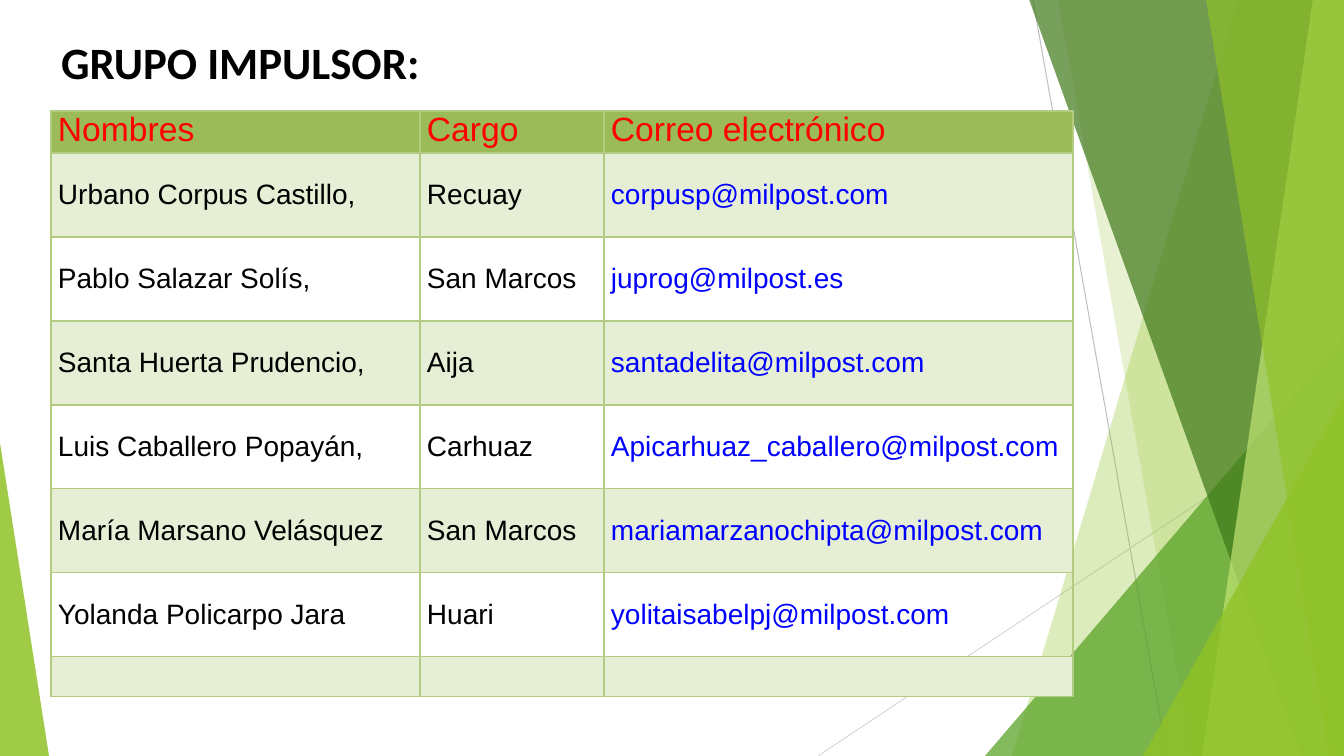
"""Build the slide that lists the members of the promoting group."""

import dataclasses

import lxml.etree
import pptx
import pptx.dml.color
import pptx.enum.shapes
import pptx.enum.text
import pptx.oxml.ns
import pptx.util

qn = pptx.oxml.ns.qn


@dataclasses.dataclass(frozen=True)
class Theme:
    """Colours, fonts and type sizes of the slide."""

    black: str = "000000"
    red: str = "FF0000"
    link: str = "0000FF"
    lime: str = "90C226"
    pale_lime: str = "C0E474"
    green: str = "54A021"
    dark_green: str = "3F7819"
    grey: str = "BFBFBF"
    light_grey: str = "D9D9D9"
    header: str = "9BBB59"
    band: str = "E6EED5"
    border: str = "B3CC82"
    title_font: str = "Calibri"
    table_font: str = "Arial"
    title_size: int = 32
    header_size: int = 24
    body_size: int = 20


class SlideBuilder:
    """Draw elements on one slide, with lengths in px."""

    WIDTH, HEIGHT = 1344, 756
    SCALE = 914400 / 100.8

    def __init__(self, deck, theme):
        """Set the slide size and add a titled page."""
        self.theme = theme
        deck.slide_width = self.emu(self.WIDTH)
        deck.slide_height = self.emu(self.HEIGHT)
        self.page = deck.slides.add_slide(deck.slide_layouts[5])

    def emu(self, px):
        """Turn px into EMU."""
        return pptx.util.Emu(round(px * self.SCALE))

    def rgb(self, colour):
        """Turn a hex string into a colour."""
        return pptx.dml.color.RGBColor.from_string(colour)

    def set_font(self, paragraph, name, size, colour, bold=False):
        """Format all the text of a paragraph."""
        font = paragraph.font
        font.name, font.size, font.bold = name, pptx.util.Pt(size), bold
        font.color.rgb = self.rgb(colour)

    def tint(self, shape, colour, opacity):
        """Give a shape a translucent fill without outline or shadow."""
        shape.shadow.inherit = False
        shape.line.fill.background()
        shape.fill.solid()
        shape.fill.fore_color.rgb = self.rgb(colour)
        solid = shape.element.spPr.find(qn("a:solidFill"))
        alpha = lxml.etree.SubElement(solid[0], qn("a:alpha"))
        alpha.set("val", str(opacity * 1000))

    def line(self, start, end, colour):
        """Draw a thin straight line."""
        connector = self.page.shapes.add_connector(
            pptx.enum.shapes.MSO_CONNECTOR.STRAIGHT,
            *(self.emu(px) for px in (*start, *end)),
        )
        connector.line.color.rgb = self.rgb(colour)
        connector.line.width = pptx.util.Pt(0.75)
        lxml.etree.SubElement(connector.element.spPr, qn("a:effectLst"))

    def ray(self, top_x, bottom_x, colour, opacity):
        """Draw a full-height panel with a slanted left edge."""
        builder = self.page.shapes.build_freeform(top_x, -1, scale=self.SCALE)
        builder.add_line_segments(
            [(self.WIDTH, -1), (self.WIDTH, self.HEIGHT), (bottom_x, self.HEIGHT)]
        )
        self.tint(builder.convert_to_shape(), colour, opacity)

    def triangle(self, left, top, width, apex, colour, opacity):
        """Draw a triangle standing on the bottom edge of the slide."""
        frame = (left, top, width, self.HEIGHT - top)
        shape = self.page.shapes.add_shape(
            pptx.enum.shapes.MSO_SHAPE.ISOSCELES_TRIANGLE,
            *(self.emu(px) for px in frame),
        )
        shape.adjustments[0] = apex
        self.tint(shape, colour, opacity)

    def title(self, text, left, top, width, height):
        """Place and format the title."""
        box = self.page.shapes.title
        box.left, box.top = self.emu(left), self.emu(top)
        box.width, box.height = self.emu(width), self.emu(height)
        frame = box.text_frame
        frame.text = text
        frame.word_wrap = False
        frame.auto_size = pptx.enum.text.MSO_AUTO_SIZE.SHAPE_TO_FIT_TEXT
        frame.vertical_anchor = pptx.enum.text.MSO_ANCHOR.TOP
        para = frame.paragraphs[0]
        para.alignment = pptx.enum.text.PP_ALIGN.LEFT
        theme = self.theme
        self.set_font(para, theme.title_font, theme.title_size, theme.black, True)

    def cell_borders(self, cell):
        """Outline the four sides of a cell."""
        properties = cell._tc.get_or_add_tcPr()
        for side in ("a:lnL", "a:lnR", "a:lnT", "a:lnB"):
            edge = lxml.etree.SubElement(properties, qn(side), w="12700")
            solid = lxml.etree.SubElement(edge, qn("a:solidFill"))
            lxml.etree.SubElement(solid, qn("a:srgbClr"), val=self.theme.border)

    def cell(self, cell, text, fill, size, colour, anchor):
        """Fill and format one table cell."""
        cell.margin_left = cell.margin_right = self.emu(7)
        cell.margin_top = cell.margin_bottom = 0
        cell.vertical_anchor = anchor
        self.cell_borders(cell)
        if fill:
            cell.fill.solid()
            cell.fill.fore_color.rgb = self.rgb(fill)
        else:
            cell.fill.background()
        cell.text = text
        para = cell.text_frame.paragraphs[0]
        para.alignment = pptx.enum.text.PP_ALIGN.JUSTIFY
        self.set_font(para, self.theme.table_font, size, colour)

    def table(self, rows, left, top, widths, heights):
        """Draw a banded table whose last column holds addresses."""
        theme, anchors = self.theme, pptx.enum.text.MSO_ANCHOR
        frame = (left, top, sum(widths), sum(heights))
        table = self.page.shapes.add_table(
            len(rows), len(widths), *(self.emu(px) for px in frame)
        ).table
        table.first_row = table.horz_banding = False
        for column, width in zip(table.columns, widths):
            column.width = self.emu(width)
        for index, (row, texts, height) in enumerate(zip(table.rows, rows, heights)):
            row.height = self.emu(height)
            for cell, text, ink in zip(
                row.cells, texts, (theme.black, theme.black, theme.link)
            ):
                if index == 0:
                    style = (theme.header, theme.header_size, theme.red, anchors.TOP)
                else:
                    band = theme.band if index % 2 else None
                    style = (band, theme.body_size, ink, anchors.MIDDLE)
                self.cell(cell, text, *style)


MEMBERS = [
    ("Nombres", "Cargo", "Correo electrónico"),
    ("Urbano Corpus Castillo,", "Recuay", "corpusp@milpost.com"),
    ("Pablo Salazar Solís,", "San Marcos", "juprog@milpost.es"),
    ("Santa Huerta Prudencio,", "Aija", "santadelita@milpost.com"),
    ("Luis Caballero Popayán,", "Carhuaz", "Apicarhuaz_caballero@milpost.com"),
    ("María Marsano Velásquez", "San Marcos", "mariamarzanochipta@milpost.com"),
    ("Yolanda Policarpo Jara", "Huari", "yolitaisabelpj@milpost.com"),
    ("", "", ""),
]


def main():
    """Build and save the deck."""
    deck = pptx.Presentation()
    theme = Theme()
    slide = SlideBuilder(deck, theme)
    slide.line((1033, 0), (1167, 756), theme.grey)
    slide.line((1344, 406), (818, 756), theme.light_grey)
    slide.ray(1238, 1012, theme.lime, 30)
    slide.ray(1058, 1192, theme.lime, 20)
    slide.triangle(985, 336, 359, 1, theme.green, 72)
    slide.ray(1029, 1301, theme.dark_green, 70)
    slide.ray(1313, 1202, theme.pale_lime, 70)
    slide.ray(1206, 1329, theme.lime, 65)
    slide.triangle(1143, 396, 201, 1, theme.lime, 80)
    slide.triangle(0, 443, 49, 0, theme.lime, 85)
    slide.title("GRUPO IMPULSOR:", 51, 30, 453, 64)
    slide.table(MEMBERS, 51, 111, (369, 184, 469), (42, *[84] * 6, 40))
    deck.save("out.pptx")


if __name__ == "__main__":
    main()
